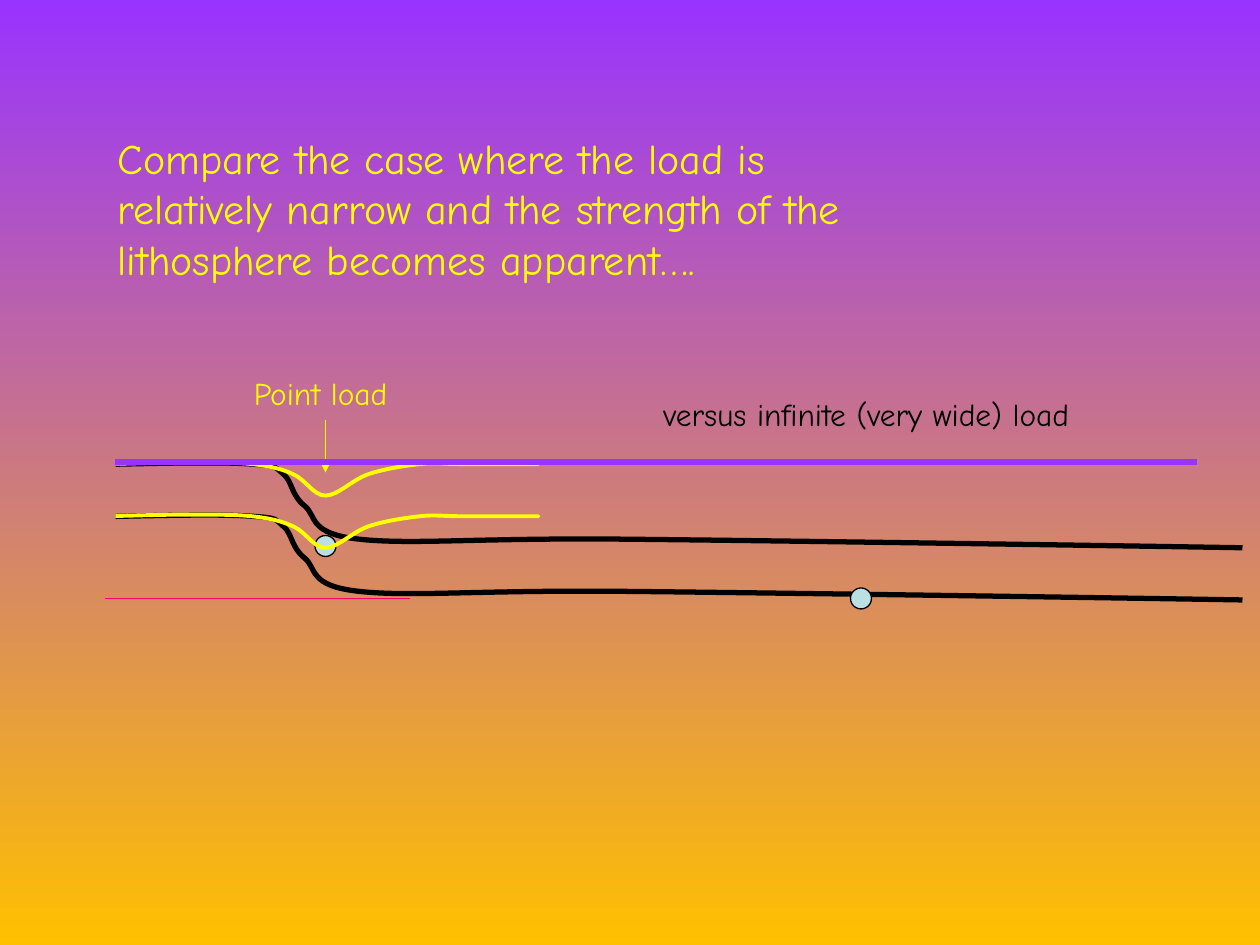
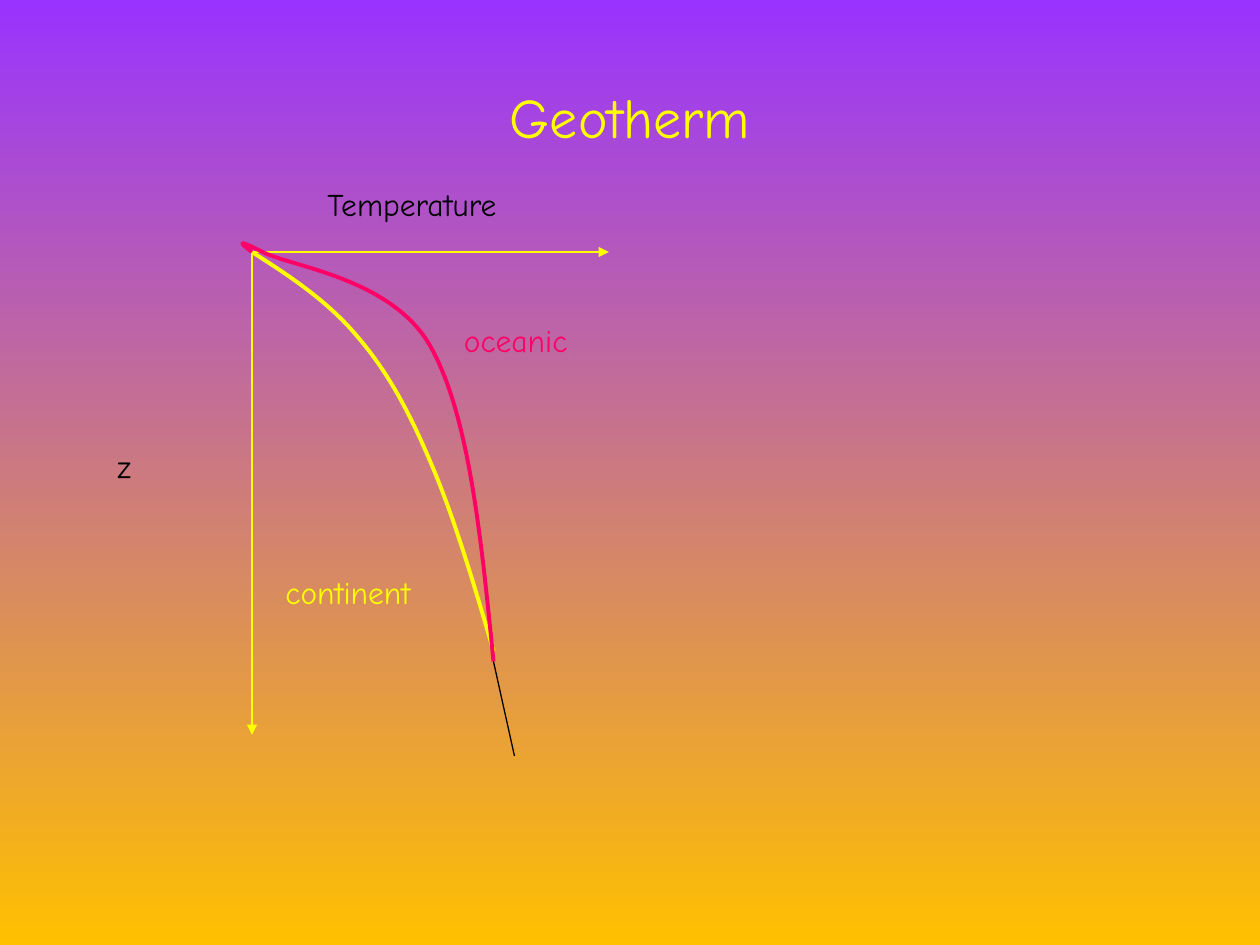
import lxml.etree
import pptx
import pptx.dml.color
import pptx.enum.shapes
import pptx.enum.text
import pptx.oxml
import pptx.oxml.ns
import pptx.util

Pt = pptx.util.Pt
qn = pptx.oxml.ns.qn

THEME = dict(
    font="Comic Neue", title=32, lead=24, label=18,
    violet="9933FF", amber="FFC000", yellow="FFFF00", black="000000",
    pink="FF0066", pale_blue="BBE0E3",
    thin=0.75, curve=2.25, thick=3,
)
SLIDE_SIZE = (720, 540)
LABEL_HEIGHT = 28.8

# Curves: a start point, then cubic segments (control, control, end).
PLATE_THICKNESS = 29.8
WIDE_LOAD_PLATE = ((66, 265.3), [
    ((97, 264.6), (128, 264), (144, 265.2)),
    ((160, 266.2), (157, 267), (162, 271)),
    ((167, 275), (166.4, 283), (174, 289)),
    ((181.4, 295), (175.7, 305.1), (206, 308.2)),
    ((236, 311.3), (273, 307.3), (357, 308.1)),
    ((440.6, 308.9), (636.5, 311.8), (710, 313)),
])
POINT_LOAD_PLATE = ((66, 265), [
    ((72, 265), (90, 264.3), (103, 264.3)),
    ((116, 264.3), (133.2, 264), (144, 265.2)),
    ((154.8, 266.4), (161.3, 268), (168, 271.2)),
    ((175, 274.5), (179.3, 283.2), (186, 283.2)),
    ((193, 283.2), (201, 274.5), (210, 271.2)),
    ((219, 268), (231, 266.2), (240, 265.2)),
    ((249, 264.2), (252.7, 265.2), (264, 265.2)),
    ((275, 265.2), (300, 265.2), (306, 265.2)),
    ((312, 265.2), (301, 265.2), (300, 265.2)),
])
MARKER_SIZE = 12
POINT_LOAD_MARKER = (180, 306)
WIDE_LOAD_MARKER = (486, 336)
LOAD_LABELS = [
    ("Point load", (138, 210, 234), "yellow"),
    ("versus infinite (very wide) load", (372, 222, 306), "black"),
]
LEAD = ("Compare the case where the load is relatively narrow and the "
        "strength of the lithosphere becomes apparent….")

ORIGIN = (144, 144)
AXIS_ENDS = [(348, 144), (144, 420)]
CONTINENT_GEOTHERM = (ORIGIN, [
    ((165.6, 157.7), (187.2, 172), (204, 192)),
    ((221, 211.7), (233.3, 234), (246, 264)),
    ((259, 294), (270.7, 333), (282, 372)),
])
OCEANIC_GEOTHERM = (ORIGIN, [
    ((138.2, 139.7), (133.2, 135.4), (150, 144)),
    ((167, 152.6), (224, 159), (246, 198)),
    ((268, 237), (275, 307.5), (282, 378)),
])
GEOTHERM_LABELS = [
    ("z", (60, 252, 66), "black"),
    ("Temperature", (180, 102, 138), "black"),
    ("oceanic", (258, 180, 174), "pink"),
    ("continent", (156, 324, 168), "yellow"),
]


def rgb(color):
    return pptx.dml.color.RGBColor.from_string(THEME[color])


def style_line(line, color, weight):
    line.color.rgb = rgb(color)
    line.width = Pt(THEME[weight])


def add_slide(deck):
    slide = deck.slides.add_slide(deck.slide_layouts[6])
    sky = slide.background.fill
    sky.gradient()
    sky.gradient_angle = 270
    for stop, color in zip(sky.gradient_stops, ("violet", "amber")):
        stop.color.rgb = rgb(color)
    return slide


def add_text(slide, text, box, color="yellow", size="label",
             align="LEFT", anchor="TOP"):
    frame = slide.shapes.add_textbox(*map(Pt, box)).text_frame
    frame.word_wrap = True
    frame.vertical_anchor = getattr(pptx.enum.text.MSO_ANCHOR, anchor)
    paragraph = frame.paragraphs[0]
    paragraph.alignment = getattr(pptx.enum.text.PP_ALIGN, align)
    run = paragraph.add_run()
    run.text = text
    run.font.name = THEME["font"]
    run.font.size = Pt(THEME[size])
    run.font.color.rgb = rgb(color)


def add_labels(slide, labels):
    for text, place, color in labels:
        add_text(slide, text, (*place, LABEL_HEIGHT), color=color)


def add_line(slide, start, end, color, weight="thin", arrow=False):
    connector = slide.shapes.add_connector(
        pptx.enum.shapes.MSO_CONNECTOR.STRAIGHT, *map(Pt, (*start, *end)))
    style_line(connector.line, color, weight)
    if arrow:
        edge = connector._element.spPr.find(qn("a:ln"))
        lxml.etree.SubElement(edge, qn("a:tailEnd"), type="triangle")
    lxml.etree.SubElement(connector._element.spPr, qn("a:effectLst"))


def bend(outline):
    """Turn each three straight steps of the outline into one cubic."""
    route = next(outline._element.iter(qn("a:path")))
    steps = route.findall(qn("a:lnTo"))
    for trio in zip(steps[::3], steps[1::3], steps[2::3]):
        cubic = lxml.etree.SubElement(route, qn("a:cubicBezTo"))
        for step in trio:
            cubic.append(step[0])
            route.remove(step)


def add_curve(slide, curve, color, weight="curve", drop=0):
    start, segments = curve
    points = [start] + [point for segment in segments for point in segment]
    first, *rest = [(Pt(x), Pt(y + drop)) for x, y in points]
    builder = slide.shapes.build_freeform(*first)
    builder.add_line_segments(rest, close=False)
    outline = builder.convert_to_shape()
    bend(outline)
    outline.shadow.inherit = False
    outline.fill.background()
    style_line(outline.line, color, weight)


def add_plate(slide, curve, color, weight="curve"):
    for drop in (0, PLATE_THICKNESS):
        add_curve(slide, curve, color, weight, drop)


def add_marker(slide, corner):
    marker = slide.shapes.add_shape(
        pptx.enum.shapes.MSO_SHAPE.OVAL,
        *map(Pt, (*corner, MARKER_SIZE, MARKER_SIZE)))
    marker.shadow.inherit = False
    marker.fill.solid()
    marker.fill.fore_color.rgb = rgb("pale_blue")
    style_line(marker.line, "black", "thin")


def build_load_slide(deck):
    slide = add_slide(deck)
    add_text(slide, LEAD, (60, 72, 474, 126), size="lead")
    add_marker(slide, POINT_LOAD_MARKER)
    add_plate(slide, WIDE_LOAD_PLATE, "black", "thick")
    add_marker(slide, WIDE_LOAD_MARKER)
    add_plate(slide, POINT_LOAD_PLATE, "yellow")
    add_line(slide, (186, 240), (186, 270), "yellow", arrow=True)
    add_labels(slide, LOAD_LABELS)
    add_line(slide, (234, 342), (60, 342), "pink")
    add_line(slide, (66, 264), (684, 264), "violet", "thick")


def build_geotherm_slide(deck):
    slide = add_slide(deck)
    add_text(slide, "Geotherm", (36, 21.6, 648, 90), size="title",
             align="CENTER", anchor="MIDDLE")
    for end in AXIS_ENDS:
        add_line(slide, ORIGIN, end, "yellow", arrow=True)
    add_curve(slide, CONTINENT_GEOTHERM, "yellow")
    add_curve(slide, OCEANIC_GEOTHERM, "pink")
    add_line(slide, (282, 378), (294, 432), "black")
    add_labels(slide, GEOTHERM_LABELS)


def main():
    deck = pptx.Presentation()
    deck.slide_width, deck.slide_height = map(Pt, SLIDE_SIZE)
    build_load_slide(deck)
    build_geotherm_slide(deck)
    deck.save("out.pptx")


if __name__ == "__main__":
    main()
